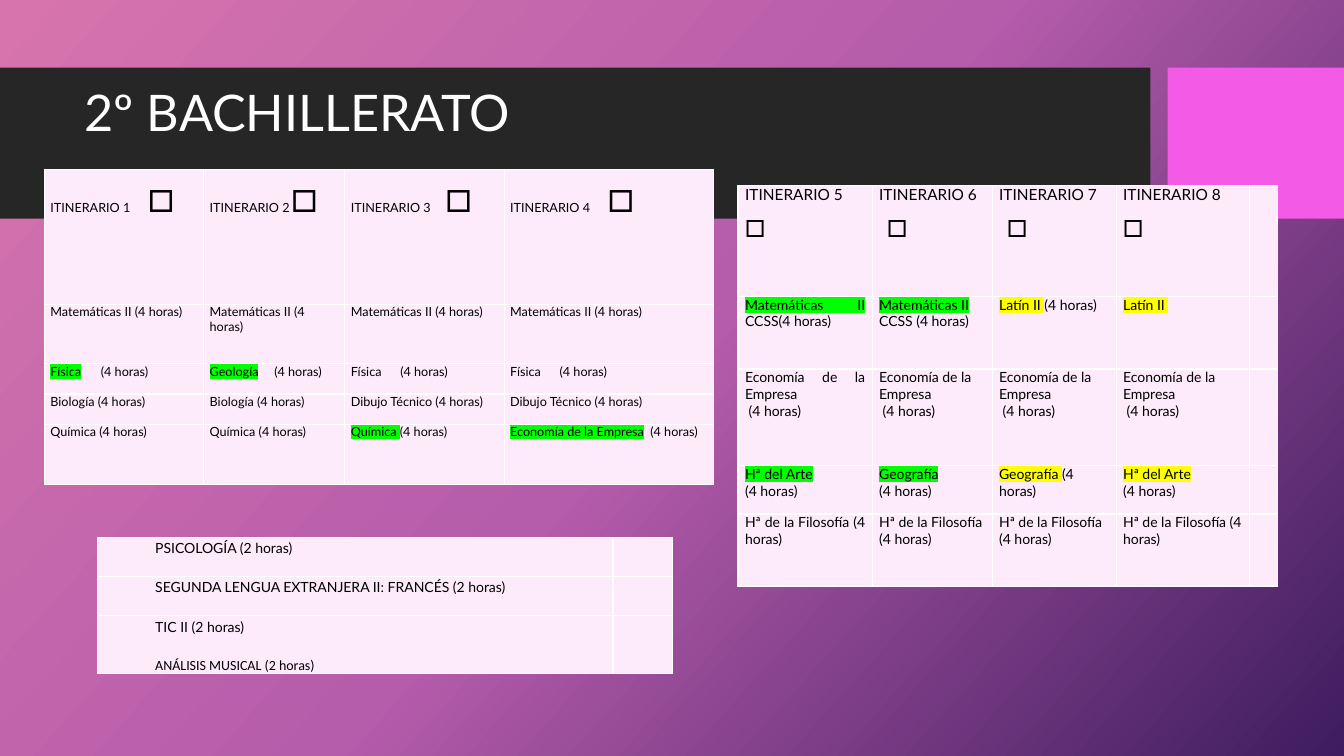
import copy

import pptx
import pptx.dml.color
import pptx.enum.shapes
import pptx.enum.text
import pptx.oxml
import pptx.oxml.ns
import pptx.util
from pptx.util import Inches

GREEN, YELLOW = "00FF00", "FFFF00"
WHITE, BLACK, PALE_PINK = "FFFFFF", "000000", "FDEAFA"
NAMESPACE = pptx.oxml.ns.nsdecls("a")


def rgb(value):
    return pptx.dml.color.RGBColor.from_string(value)


def write_text(paragraph, text, size=10, color=BLACK, font="Lato", highlight=None):
    run = paragraph.add_run()
    run.text = text
    run.font.size = pptx.util.Pt(size)
    run.font.color.rgb = rgb(color)
    run.font.name = font
    if highlight:
        mark = pptx.oxml.parse_xml(
            f'<a:highlight {NAMESPACE}><a:srgbClr val="{highlight}"/></a:highlight>')
        run.font._element.find(pptx.oxml.ns.qn("a:solidFill")).addnext(mark)


presentation = pptx.Presentation()
presentation.slide_width = Inches(13.33)
presentation.slide_height = Inches(7.5)
slide = presentation.slides.add_slide(presentation.slide_layouts[6])

background = slide.background.fill
background.gradient()
background.gradient_angle = 318
stop_list = slide.element.xpath(".//a:gsLst")[0]
stop_list.append(copy.deepcopy(stop_list[0]))
for stop, position, color in zip(background.gradient_stops, (0, 0.5, 1),
                                 ("D774AD", "B55CAB", "3E1C5F")):
    stop.position = position
    stop.color.rgb = rgb(color)

for left, width, color in ((0, 11.41, "262626"), (11.58, 1.75, "F35AE6")):
    band = slide.shapes.add_shape(pptx.enum.shapes.MSO_SHAPE.RECTANGLE,
                                  Inches(left), Inches(0.67), Inches(width), Inches(1.5))
    band.shadow.inherit = False
    band.fill.solid()
    band.fill.fore_color.rgb = rgb(color)
    band.line.fill.background()

title = slide.shapes.add_textbox(Inches(0.74), Inches(0.82), Inches(10.51), Inches(1.18))
title.text_frame.word_wrap = True
title.text_frame.paragraphs[0].line_spacing = 0.9
write_text(title.text_frame.paragraphs[0], "2º BACHILLERATO", size=36, color=WHITE)

# Each cell holds highlighted text, plain text and tab stops in inches.
EMPTY = ("", "", ())
MATHS = ("", "Matemáticas II (4 horas)", ())
PHYSICS = ("", "Física\t(4 horas)", (0.49,))
BIOLOGY = ("", "Biología\t(4 horas)", (0.47,))
DRAWING = ("", "Dibujo Técnico (4 horas)", ())
CHEMISTRY = ("", "Química (4 horas)", ())
BUSINESS = ("", "Economía de la Empresa\n (4 horas)", ())
PHILOSOPHY = ("", "Hª de la Filosofía (4 horas)", ())
ART = ("Hª del Arte\t", "\n(4 horas)", (0.74,))

science_rows = [
    [("", f"ITINERARIO {number}\t□", (stop,))
     for number, stop in enumerate((0.97, 0.81, 0.94, 0.97), 1)],
    [MATHS] * 4,
    [("Física\t", "\t(4 horas)", (0.4, 0.5)), ("Geología\t", "\t(4 horas)", (0.58, 0.64)),
     PHYSICS, PHYSICS],
    [BIOLOGY, BIOLOGY, DRAWING, DRAWING],
    [CHEMISTRY, CHEMISTRY, ("Química ", "(4 horas)", ()),
     ("Economía de la Empresa\t", "(4 horas)", (1.39,))],
]
humanities_rows = [
    [("", "ITINERARIO 5\n□", ()), ("", "ITINERARIO 6\n\t□", (0.08,)),
     ("", "ITINERARIO 7\n\t□", (0.08,)), ("", "ITINERARIO 8\n□", ()), EMPTY],
    [("Matemáticas II ", "CCSS(4 horas)", ()), ("Matemáticas II ", "CCSS (4 horas)", ()),
     ("Latín II ", "(4 horas)", ()), ("Latín II ", "", ()), EMPTY],
    [BUSINESS] * 4 + [EMPTY],
    [ART, ("Geografía", "\n(4 horas)", ()), ("Geografía ", "(4 horas)", ()), ART, EMPTY],
    [PHILOSOPHY] * 4 + [EMPTY],
]
optional_rows = [
    [("", "PSICOLOGÍA (2 horas)", ()), EMPTY],
    [("", "SEGUNDA LENGUA EXTRANJERA II: FRANCÉS (2 horas)", ()), EMPTY],
    [("", "TIC II (2 horas)", ()), EMPTY],
]


def add_grid(rows, left, top, widths, heights, margin, size, header_size, box_size):
    table = slide.shapes.add_table(len(rows), len(widths), Inches(left), Inches(top),
                                   Inches(sum(widths)), Inches(sum(heights))).table
    table.first_row = table.horz_banding = False
    for column, width in zip(table.columns, widths):
        column.width = Inches(width)
    for row, height in zip(table.rows, heights):
        row.height = Inches(height)
    for row_index, row in enumerate(rows):
        for column_index, (marked, plain, stops) in enumerate(row):
            cell = table.cell(row_index, column_index)
            cell.margin_left = cell.margin_right = Inches(margin)
            cell.margin_top = cell.margin_bottom = 0
            for side in "LRTB":
                cell._tc.get_or_add_tcPr().append(pptx.oxml.parse_xml(
                    f'<a:ln{side} {NAMESPACE} w="12700"><a:solidFill>'
                    f'<a:srgbClr val="{WHITE}"/></a:solidFill></a:ln{side}>'))
            cell.fill.solid()
            cell.fill.fore_color.rgb = rgb(PALE_PINK)
            text_size = size if row_index else header_size
            for line_index, line in enumerate(plain.split("\n")):
                frame = cell.text_frame
                paragraph = frame.add_paragraph() if line_index else frame.paragraphs[0]
                if stops:
                    tabs = "".join(f'<a:tab pos="{Inches(stop)}" algn="l"/>' for stop in stops)
                    paragraph._p.get_or_add_pPr().append(
                        pptx.oxml.parse_xml(f"<a:tabLst {NAMESPACE}>{tabs}</a:tabLst>"))
                if marked and line_index == 0:
                    color = YELLOW if rows is humanities_rows and column_index > 1 else GREEN
                    write_text(paragraph, marked, size=text_size, highlight=color)
                label, box, _ = line.partition("□")
                if label:
                    write_text(paragraph, label, size=text_size)
                if box:
                    write_text(paragraph, box, size=box_size)
    return table


add_grid(science_rows, 0.44, 1.68, (1.58, 1.4, 1.58, 2.08), (1.34, 0.59, 0.3, 0.3, 0.6),
         margin=0.06, size=9, header_size=9, box_size=31)

humanities = add_grid(humanities_rows, 7.32, 1.84, (1.33, 1.19, 1.23, 1.32, 0.28),
                      (1.1, 0.72, 0.96, 0.48, 0.72),
                      margin=0.07, size=10, header_size=11, box_size=24)
for row_index in range(1, len(humanities_rows)):
    for paragraph in humanities.cell(row_index, 0).text_frame.paragraphs:
        paragraph.alignment = pptx.enum.text.PP_ALIGN.JUSTIFY

optional = add_grid(optional_rows, 0.97, 5.33, (5.11, 0.59), (0.39, 0.39, 0.57),
                    margin=0.07, size=10, header_size=10, box_size=10)
music = optional.cell(2, 0).text_frame.add_paragraph()
music.space_before = pptx.util.Pt(13.8)
write_text(music, "ANÁLISIS MUSICAL (2 horas)", font="Calibri")
for row_index in range(len(optional_rows)):
    for paragraph in optional.cell(row_index, 0).text_frame.paragraphs:
        paragraph.line_spacing = 1.15
        paragraph._p.get_or_add_pPr().set("marL", str(Inches(0.5)))

presentation.save("out.pptx")
